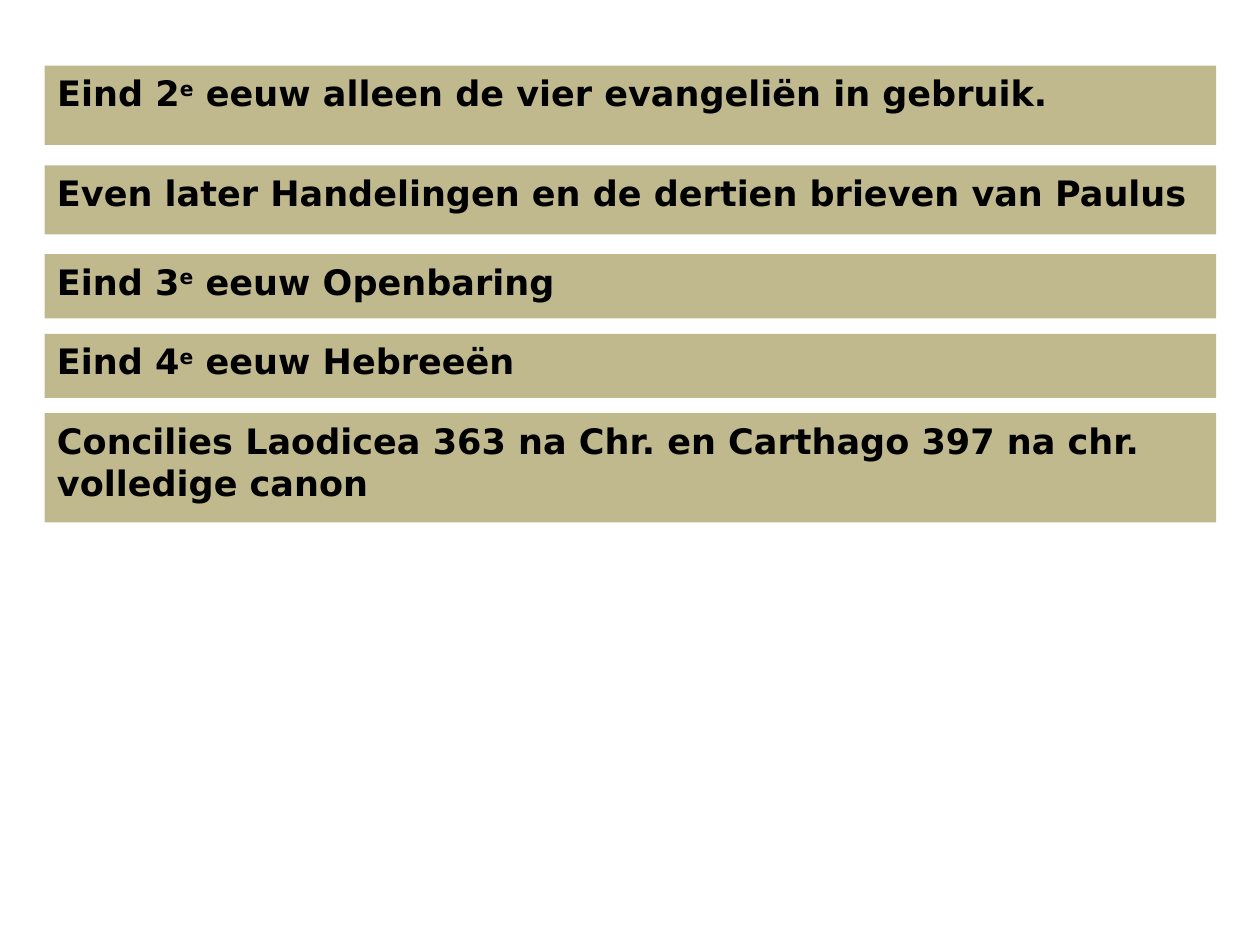
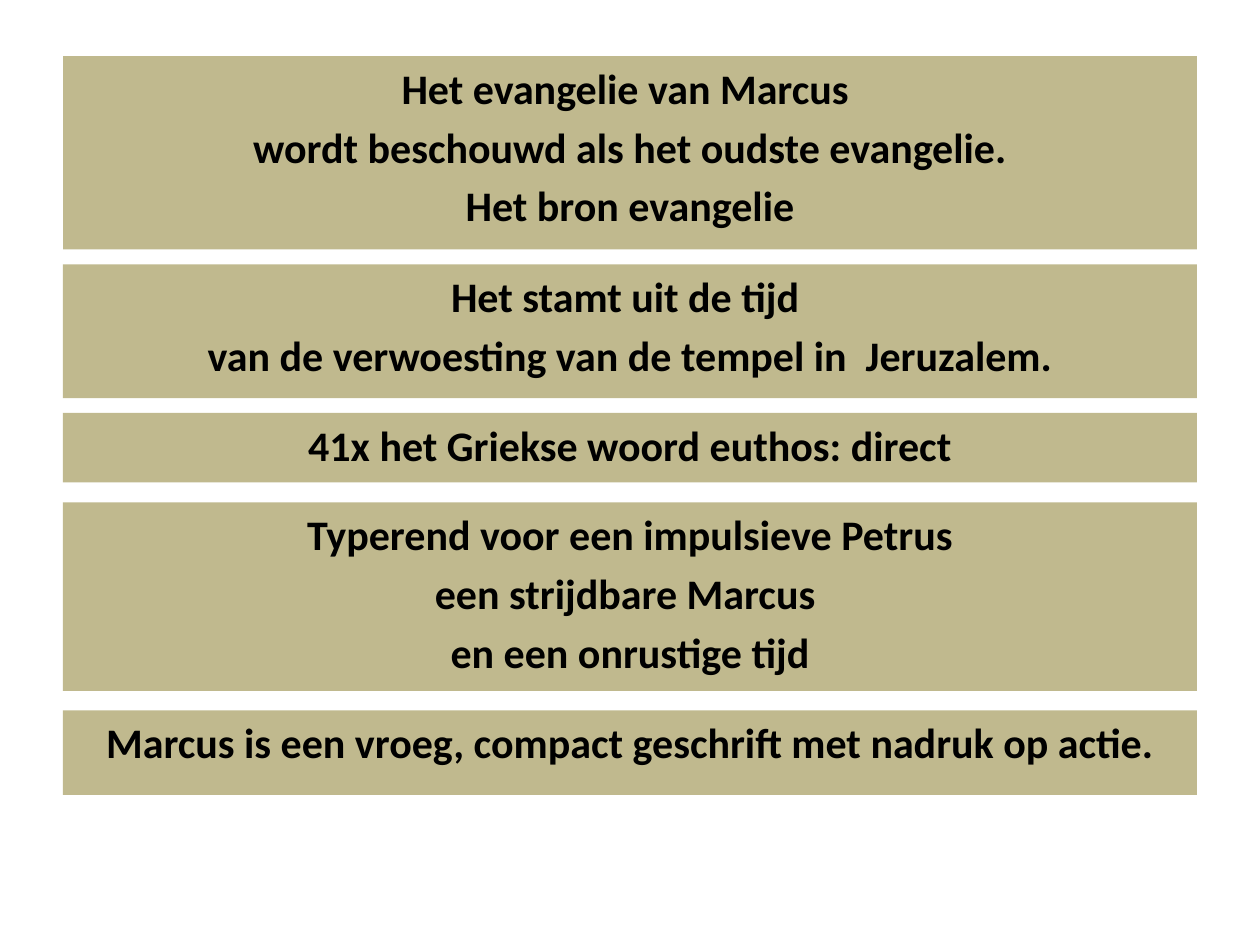
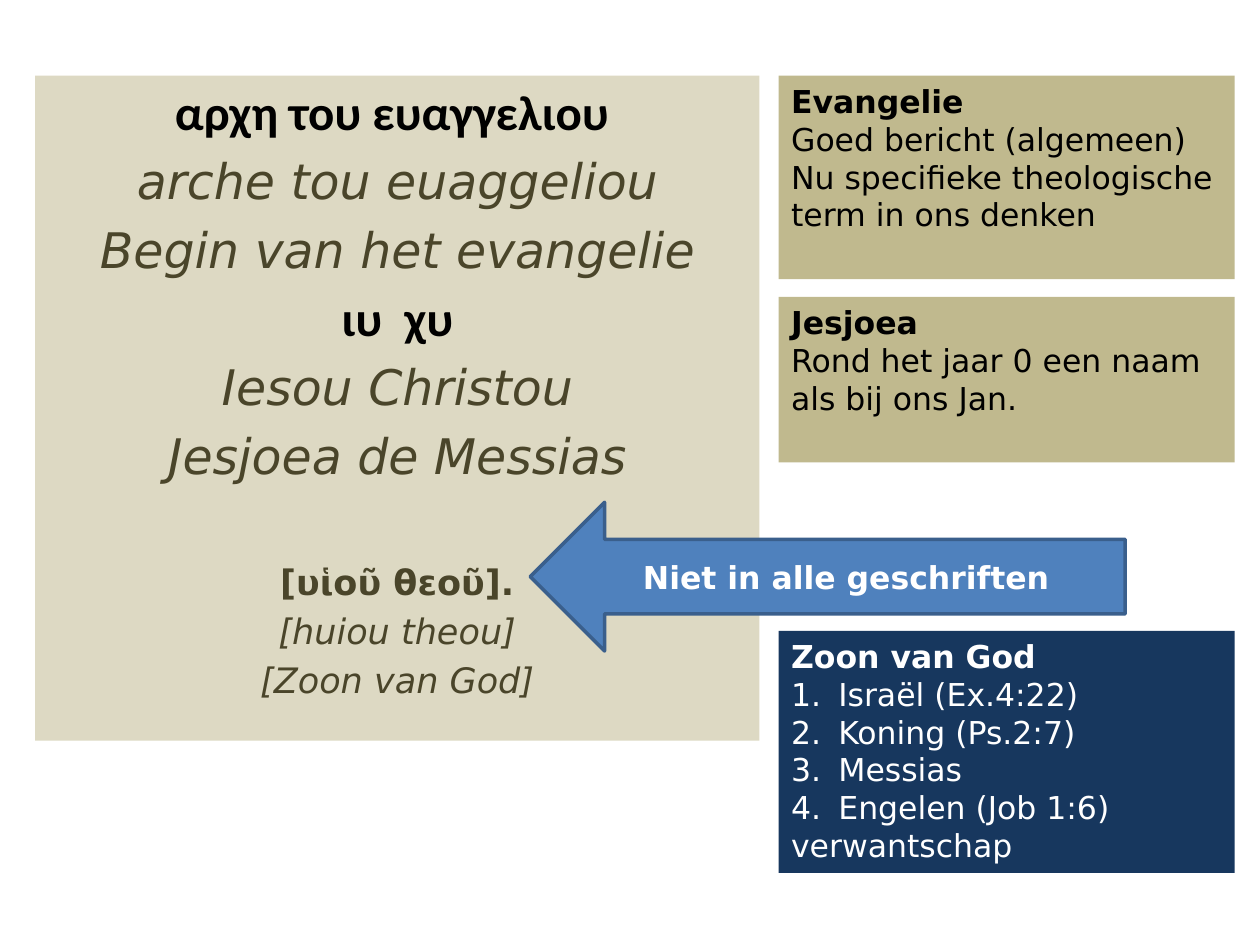
from dataclasses import dataclass, replace

from lxml import etree
from pptx import Presentation
from pptx.dml.color import RGBColor
from pptx.enum.shapes import MSO_SHAPE
from pptx.enum.text import MSO_ANCHOR, MSO_AUTO_SIZE, PP_ALIGN
from pptx.oxml.ns import qn
from pptx.util import Pt

LEFT, CENTER = PP_ALIGN.LEFT, PP_ALIGN.CENTER
TOP, MIDDLE = MSO_ANCHOR.TOP, MSO_ANCHOR.MIDDLE
NO_AUTOFIT = MSO_AUTO_SIZE.NONE
LEFT_ARROW = MSO_SHAPE.LEFT_ARROW

BLACK = RGBColor(0x00, 0x00, 0x00)
WHITE = RGBColor(0xFF, 0xFF, 0xFF)
KHAKI = RGBColor(0xC0, 0xB9, 0x8E)
SAND = RGBColor(0xDD, 0xD9, 0xC3)
OLIVE = RGBColor(0x4A, 0x45, 0x2A)
NAVY = RGBColor(0x17, 0x37, 0x5E)
BLUE = RGBColor(0x4F, 0x81, 0xBD)
BLUE_EDGE = RGBColor(0x3A, 0x5F, 0x8C)

CONTENT_LAYOUT, BLANK_LAYOUT = 1, 6
NUMBER_INDENT = Pt(27)


@dataclass(frozen=True)
class Style:
    size: float
    font: str = "DejaVu Sans"
    color: RGBColor = BLACK
    bold: bool = False
    italic: bool = False
    raised: bool = False


@dataclass(frozen=True)
class Line:
    """One paragraph: its (text, style) runs and its layout."""
    runs: tuple
    align: int = LEFT
    spaced: bool = False
    gap: float = 0
    numbered: bool = False


def lines(style, *texts, **layout):
    return [Line(((text, style),), **layout) for text in texts]


class Deck:
    def __init__(self):
        self.prs = Presentation()
        self.prs.slide_width, self.prs.slide_height = Pt(720), Pt(540)
        self.slide = None

    def new_slide(self, layout):
        self.slide = self.prs.slides.add_slide(self.prs.slide_layouts[layout])
        title = self.slide.shapes.title
        if title is not None:
            title._element.getparent().remove(title._element)

    def body(self, place, fill, content):
        """Fill the template's body placeholder."""
        body = self.slide.placeholders[1]
        body.left, body.top, body.width, body.height = map(Pt, place)
        self._finish(body, fill, content)

    def panel(self, place, fill, content):
        panel = self.slide.shapes.add_textbox(*map(Pt, place))
        self._finish(panel, fill, content)

    def arrow(self, place, content):
        arrow = self.slide.shapes.add_shape(LEFT_ARROW, *map(Pt, place))
        arrow.shadow.inherit = False
        arrow.line.color.rgb = BLUE_EDGE
        arrow.line.width = Pt(2)
        self._finish(arrow, BLUE, content, MIDDLE)

    def bands(self, left, width, rows):
        """Stack of bands, the first one being the body placeholder."""
        for index, (top, height, content) in enumerate(rows):
            add = self.panel if index else self.body
            add((left, top, width, height), KHAKI, content)

    def _finish(self, shape, fill, content, anchor=TOP):
        shape.fill.solid()
        shape.fill.fore_color.rgb = fill
        frame = shape.text_frame
        frame.word_wrap = True
        frame.auto_size = NO_AUTOFIT
        frame.vertical_anchor = anchor
        for index, line in enumerate(content):
            paragraph = frame.add_paragraph() if index else frame.paragraphs[0]
            self._write(paragraph, line, first=index == 0)

    def _write(self, paragraph, line, first):
        props = paragraph._p.get_or_add_pPr()
        indent = NUMBER_INDENT if line.numbered else 0
        props.set("marL", str(indent))
        props.set("indent", str(-indent))
        # Spacing is a share of the line height unless a gap is given
        if line.spaced and not first and not line.gap:
            before = etree.SubElement(props, qn("a:spcBef"))
            etree.SubElement(before, qn("a:spcPct"), val="20000")
        else:
            paragraph.space_before = Pt(line.gap)
        if line.numbered:
            etree.SubElement(props, qn("a:buAutoNum"), type="arabicPeriod")
        else:
            etree.SubElement(props, qn("a:buNone"))
        paragraph.alignment = line.align
        for text, style in line.runs:
            run = paragraph.add_run()
            run.text = text
            run.font.size = Pt(style.size)
            run.font.name = style.font
            run.font.color.rgb = style.color
            run.font.bold = style.bold
            run.font.italic = style.italic
            if style.raised:
                run._r.get_or_add_rPr().set("baseline", "30000")


def canon_slide(deck):
    strong = Style(20, bold=True)
    raised = replace(strong, raised=True)

    def century(number, rest):
        return [Line(((f"Eind {number}", strong), ("e", raised),
                      (f" eeuw {rest}", strong)))]

    deck.new_slide(CONTENT_LAYOUT)
    deck.bands(25.5, 669.5, [
        (37.5, 45.25, century(2, "alleen de vier evangeliën in gebruik.")),
        (94.5, 39.5, lines(
            strong, "Even later Handelingen en de dertien brieven van Paulus")),
        (145.25, 36.75, century(3, "Openbaring")),
        (190.75, 36.75, century(4, "Hebreeën")),
        (236, 62.5, lines(
            strong, "Concilies Laodicea 363 na Chr. en Carthago 397 na chr. "
                    "volledige canon")),
    ])


def mark_slide(deck):
    def centred(*texts):
        return lines(Style(24, "Calibri", bold=True), *texts,
                     align=CENTER, spaced=True)

    deck.new_slide(CONTENT_LAYOUT)
    deck.bands(36, 648, [
        (32, 110.5, centred("Het evangelie van Marcus ",
                            "wordt beschouwd als het oudste evangelie.",
                            "Het bron evangelie")),
        (151, 76.5, centred("Het stamt uit de tijd ",
                            "van de verwoesting van de tempel in  Jeruzalem.")),
        (236, 39.75, centred("41x het Griekse woord euthos: direct")),
        (287, 107.75, centred("Typerend voor een impulsieve Petrus",
                              "een strijdbare Marcus ",
                              "en een onrustige tijd")),
        (406, 48.25, centred(
            "Marcus is een vroeg, compact geschrift met nadruk op actie.")),
    ])


def opening_verse_slide(deck):
    greek = Style(28, "Calibri", bold=True)
    reading = Style(28, color=OLIVE, italic=True)
    small_reading = replace(reading, size=20)
    small_greek = Style(20, color=OLIVE, bold=True)
    verse = {"align": CENTER, "spaced": True}

    # Verse with transliteration and translation
    deck.new_slide(BLANK_LAYOUT)
    deck.panel((20, 43.25, 414, 380), SAND, [
        *lines(greek, "αρχη του ευαγγελιου ", **verse),
        *lines(reading, "arche tou euaggeliou", "Begin van het evangelie",
               **verse),
        *lines(greek, "ιυ  χυ", **verse),
        *lines(reading, "Iesou Christou", "Jesjoea de Messias", **verse),
        *lines(small_greek, "[υἱοῦ θεοῦ].", gap=43.5, **verse),
        *lines(small_reading, "[huiou theou]", "[Zoon van God]", **verse),
    ])
    deck.arrow((303, 287, 340, 85), lines(
        Style(18, color=WHITE, bold=True), "Niet in alle geschriften",
        align=CENTER))

    # Explanations of the terms
    def term(top, height, fill, color, heading, *explanation):
        plain = Style(18, color=color)
        content = lines(replace(plain, bold=True), heading)
        for text, numbered in explanation:
            content += lines(plain, text, numbered=numbered)
        deck.panel((445, top, 260.5, height), fill, content)

    term(43.25, 116.25, KHAKI, BLACK, "Evangelie",
         ("Goed bericht (algemeen)", False),
         ("Nu specifieke theologische term in ons denken", False))
    term(169.75, 94.5, KHAKI, BLACK, "Jesjoea",
         ("Rond het jaar 0 een naam als bij ons Jan.", False))
    term(360.5, 138.25, NAVY, WHITE, "Zoon van God",
         ("Israël (Ex.4:22)", True), ("Koning (Ps.2:7)", True),
         ("Messias", True), ("Engelen (Job 1:6)", True),
         ("verwantschap", False))


def main():
    deck = Deck()
    canon_slide(deck)
    mark_slide(deck)
    opening_verse_slide(deck)
    deck.prs.save("out.pptx")


if __name__ == "__main__":
    main()
